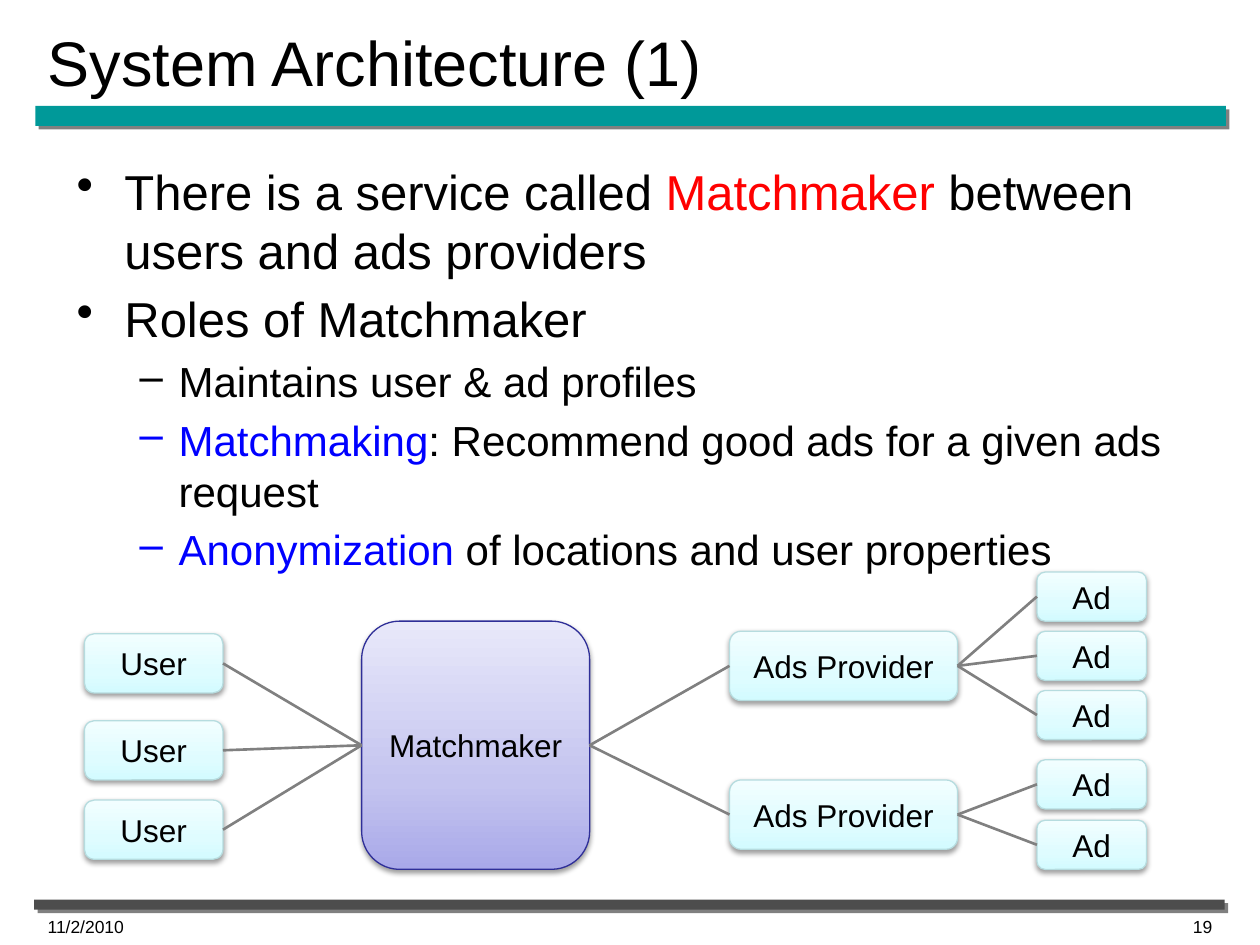
from lxml import etree
from copy import deepcopy
from pptx import Presentation
from pptx.dml.color import RGBColor
from pptx.enum.shapes import MSO_CONNECTOR, MSO_SHAPE
from pptx.enum.text import MSO_ANCHOR, PP_ALIGN
from pptx.oxml.ns import qn
from pptx.util import Inches, Pt

STRAIGHT = MSO_CONNECTOR.STRAIGHT
RECT, ROUNDED = MSO_SHAPE.RECTANGLE, MSO_SHAPE.ROUNDED_RECTANGLE
LEFT, CENTER, RIGHT = PP_ALIGN.LEFT, PP_ALIGN.CENTER, PP_ALIGN.RIGHT
TOP, MIDDLE = MSO_ANCHOR.TOP, MSO_ANCHOR.MIDDLE
LEFT_SIDE, RIGHT_SIDE = 1, 3
BLACK, RED, BLUE, GRAY = "000000", "FF0000", "0000FF", "808080"
CYAN = ("D3FBFF", "DFFCFF", "F2FEFF", "B6DCDF")
VIOLET = ("A9A9E9", "C4C4EF", "E8E8FA", "2F2F98")


def rgb(value):
    return RGBColor.from_string(value)


def add_shadow(shape, color, opacity, blur, distance, angle):
    shape.shadow.inherit = False
    effects = shape._element.spPr.find(qn("a:effectLst"))
    shadow = etree.SubElement(effects, qn("a:outerShdw"), blurRad=str(Pt(blur)),
                              dist=str(Pt(distance)), dir=str(angle * 60000),
                              algn="ctr", rotWithShape="0")
    tint = etree.SubElement(shadow, qn("a:srgbClr"), val=color)
    etree.SubElement(tint, qn("a:alpha"), val=str(opacity * 1000))


prs = Presentation()
prs.slide_width, prs.slide_height = Inches(10), Inches(7.5)
slide = prs.slides.add_slide(prs.slide_layouts[6])
shapes = slide.shapes

# Bars under the title and above the footer
for left, top, height, color in ((0.28, 0.84, 0.16, "009999"), (0.27, 7.14, 0.08, "4D4D4D")):
    bar = shapes.add_shape(RECT, Inches(left), Inches(top), Inches(9.45), Inches(height))
    bar.fill.solid()
    bar.fill.fore_color.rgb = rgb(color)
    bar.line.fill.background()
    add_shadow(bar, GRAY, 100, 0, 2.8, 45)

# Title, date and page number
for text, left, top, width, height, size, align, anchor in (
    ("System Architecture (1)", 0.28, 0.13, 9.45, 0.71, 36, LEFT, MIDDLE),
    ("11/2/2010", 0.28, 7.22, 2.33, 0.28, 10, LEFT, TOP),
    ("19", 7.39, 7.22, 2.33, 0.28, 10, RIGHT, TOP),
):
    label = shapes.add_textbox(Inches(left), Inches(top), Inches(width), Inches(height))
    frame = label.text_frame
    frame.word_wrap = True
    frame.vertical_anchor = anchor
    paragraph = frame.paragraphs[0]
    paragraph.text = text
    paragraph.alignment = align
    paragraph.font.name, paragraph.font.size = "Arial", Pt(size)
    paragraph.font.color.rgb = rgb(BLACK)

# Bullet list: level, then coloured runs
points = (
    (0, (("There is a service called ", BLACK), ("Matchmaker ", RED),
         ("between users and ads providers", BLACK))),
    (0, (("Roles of Matchmaker", BLACK),)),
    (1, (("Maintains user & ad profiles", BLACK),)),
    (1, (("Matchmaking", BLUE), (": Recommend good ads for a given ads request", BLACK))),
    (1, (("Anonymization", BLUE), (" of locations and user properties", BLACK))),
)
# Per level: size, left margin, hanging indent, bullet
levels = ((28, 0.38, 0.38, "•"), (24, 0.81, 0.31, "–"))
body = shapes.add_textbox(Inches(0.51), Inches(1.23), Inches(9), Inches(2.68)).text_frame
body.word_wrap = True
for index, (level, runs) in enumerate(points):
    size, margin, hanging, bullet = levels[level]
    paragraph = body.add_paragraph() if index else body.paragraphs[0]
    paragraph.level = level
    paragraph.space_before = Pt(size * 0.2)
    paragraph.font.name, paragraph.font.size = "Arial", Pt(size)
    for text, color in runs:
        run = paragraph.add_run()
        run.text = text
        run.font.color.rgb = rgb(color)
    properties = paragraph._p.get_or_add_pPr()
    properties.set("marL", str(Inches(margin)))
    properties.set("indent", str(-Inches(hanging)))
    mark = etree.Element(qn("a:buChar"), char=bullet)
    properties.find(qn("a:defRPr")).addprevious(mark)

# Diagram boxes: text, left, top, width, height, colours
ad_tops = (4.54, 5.01, 5.48, 6.03, 6.51)
boxes = (
    [("User", 0.67, top, 1.1, 0.47, CYAN) for top in (5.03, 5.72, 6.35)]
    + [("Ads Provider", 5.79, top, 1.81, 0.55, CYAN) for top in (5.01, 6.19)]
    + [("Ad", 8.23, top, 0.87, 0.39, CYAN) for top in ad_tops]
    + [("Matchmaker", 2.87, 4.93, 1.81, 1.97, VIOLET)]
)
nodes = {}
for text, left, top, width, height, (dark, medium, light, outline) in boxes:
    box = shapes.add_shape(ROUNDED, Inches(left), Inches(top), Inches(width), Inches(height))
    box.fill.gradient()
    box.fill.gradient_angle = 90
    first, last = box.fill.gradient_stops
    first.position, last.position = 0, 1
    first.color.rgb, last.color.rgb = rgb(dark), rgb(light)
    first._gs.addnext(deepcopy(first._gs))
    middle = box.fill.gradient_stops[1]
    middle.position, middle.color.rgb = 0.35, rgb(medium)
    box.line.color.rgb = rgb(outline)
    box.line.width = Pt(0.75)
    add_shadow(box, BLACK, 38, 3.1, 1.6, 90)
    frame = box.text_frame
    frame.vertical_anchor = MIDDLE
    frame.word_wrap = True
    paragraph = frame.paragraphs[0]
    paragraph.text = text
    paragraph.alignment = CENTER
    paragraph.font.name, paragraph.font.size = "Arial", Pt(18)
    paragraph.font.color.rgb = rgb(BLACK)
    nodes.setdefault(text, []).append(box)

# Links from each box's right side to the next box's left side
matchmaker = nodes["Matchmaker"][0]
providers, ads = nodes["Ads Provider"], nodes["Ad"]
links = (
    [(user, matchmaker) for user in nodes["User"]]
    + [(matchmaker, provider) for provider in providers]
    + [(providers[0], ad) for ad in ads[:3]]
    + [(providers[1], ad) for ad in ads[3:]]
)
for source, target in links:
    link = shapes.add_connector(STRAIGHT, 0, 0, 0, 0)
    link.begin_connect(source, RIGHT_SIDE)
    link.end_connect(target, LEFT_SIDE)
    link.line.color.rgb = rgb(GRAY)
    link.line.width = Pt(1.5)
    etree.SubElement(link._element.spPr, qn("a:effectLst"))

prs.save("out.pptx")
